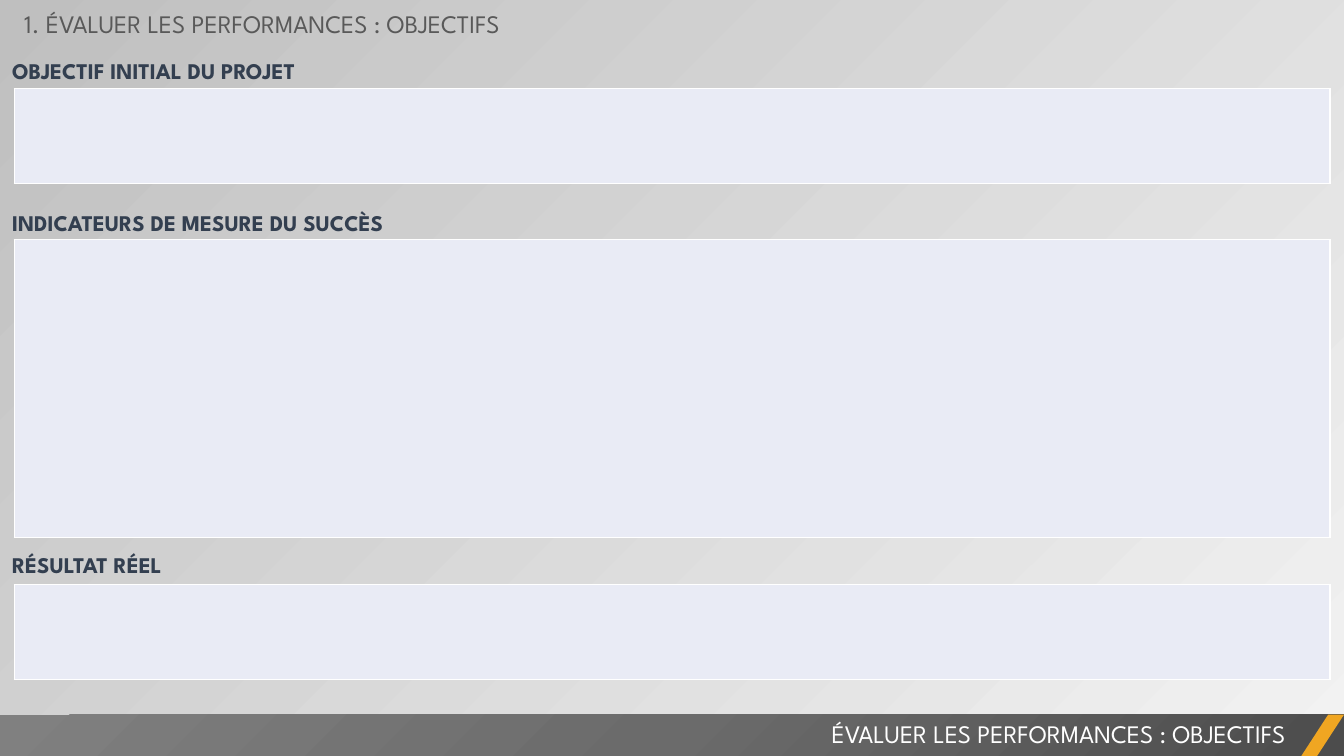
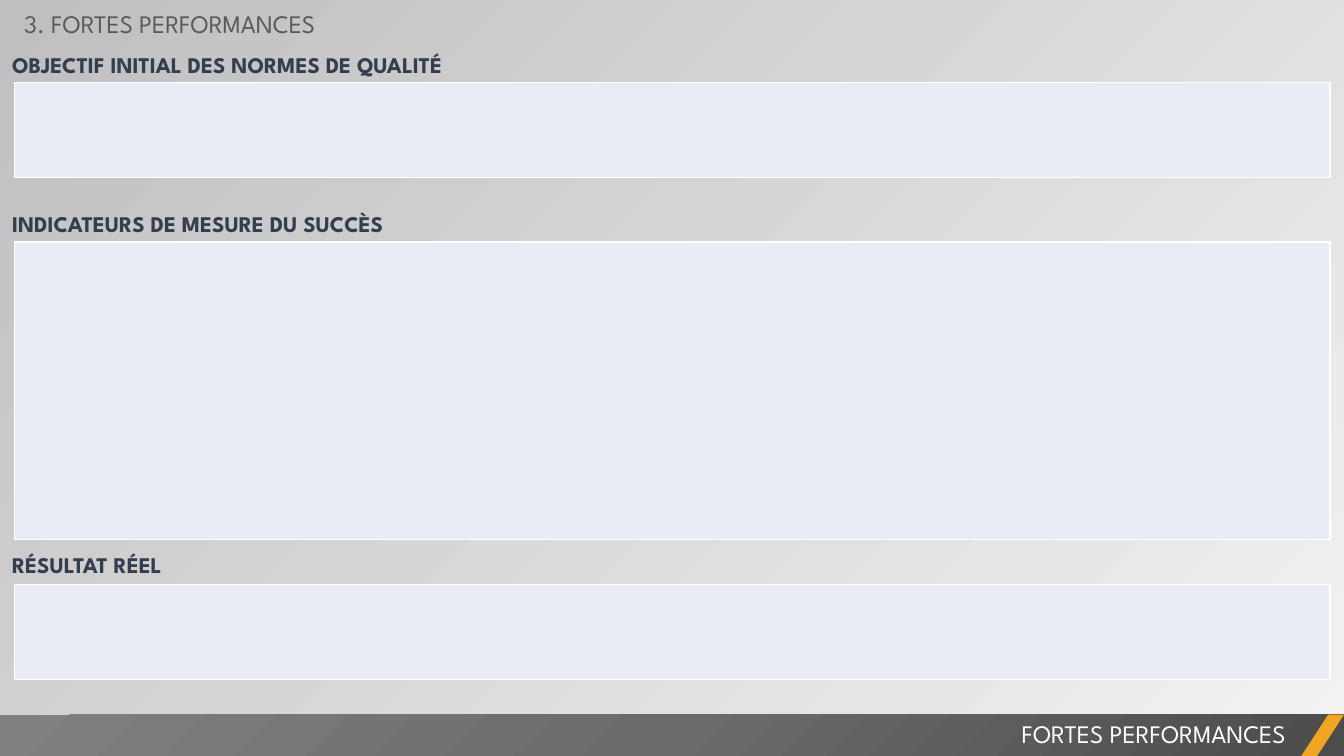
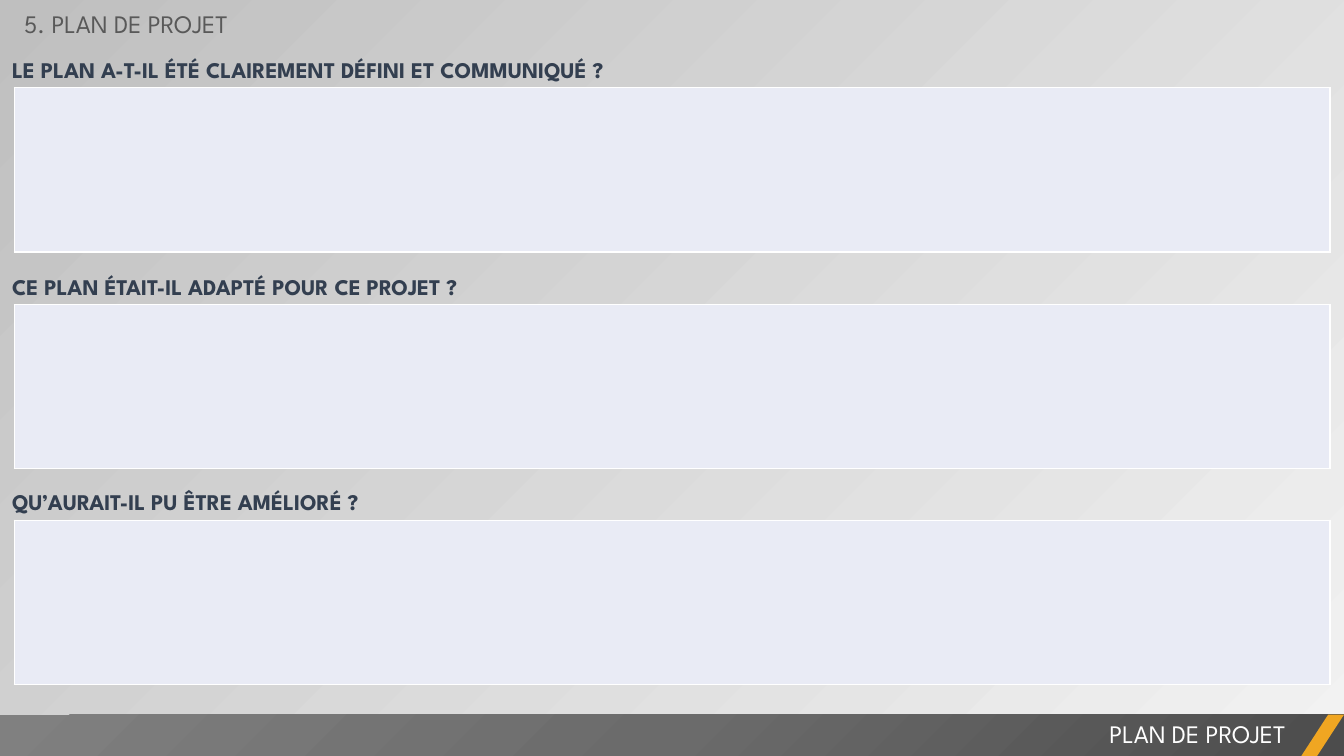
"""Build three project review slides with titled, empty answer boxes."""
from pptx import Presentation
from pptx.dml.color import RGBColor
from pptx.enum.shapes import MSO_SHAPE
from pptx.enum.text import MSO_ANCHOR, MSO_AUTO_SIZE, PP_ALIGN
from pptx.oxml import parse_xml
from pptx.oxml.ns import nsdecls, qn
from pptx.util import Inches, Pt

RECTANGLE, PARALLELOGRAM = MSO_SHAPE.RECTANGLE, MSO_SHAPE.PARALLELOGRAM
LEFT, RIGHT = PP_ALIGN.LEFT, PP_ALIGN.RIGHT
TOP, GROW = MSO_ANCHOR.TOP, MSO_AUTO_SIZE.SHAPE_TO_FIT_TEXT

FONT = "League Spartan"
WHITE = RGBColor(0xFF, 0xFF, 0xFF)
TITLE_GRAY = RGBColor(0x59, 0x59, 0x59)
NAVY = RGBColor(0x33, 0x3F, 0x50)
BOX_BLUE = RGBColor(0xE9, 0xEB, 0xF5)
ORANGE = RGBColor(0xF0, 0xA6, 0x22)
PALE_GRAY = RGBColor(0xF2, 0xF2, 0xF2)
MID_GRAY = RGBColor(0xBF, 0xBF, 0xBF)
BAND_GRAYS = [RGBColor(0x4C, 0x4C, 0x4C), RGBColor(0x6B, 0x6B, 0x6B), RGBColor(0x80, 0x80, 0x80)]

SLIDE_WIDTH, SLIDE_HEIGHT = Inches(13.33), Inches(7.5)
MARGIN = Inches(0.14)
BOX_WIDTH = SLIDE_WIDTH - 2 * MARGIN
LINE_HEIGHT = Inches(0.4)
BAND_TOP, BAND_HEIGHT = Inches(7.09), Inches(0.42)
ACCENT_WIDTH = Inches(0.43)

SLIDES = [
    ("1. ", "ÉVALUER LES PERFORMANCES : OBJECTIFS", 7.86, [
        ("OBJECTIF INITIAL DU PROJET", 3.37, 0.48, 0.88, 0.94),
        ("INDICATEURS DE MESURE DU SUCCÈS", 5.31, 1.98, 2.38, 2.95),
        ("RÉSULTAT RÉEL", 3.37, 5.38, 5.8, 0.94),
    ]),
    ("3. ", "FORTES PERFORMANCES", 5.31, [
        ("OBJECTIF INITIAL DES NORMES DE QUALITÉ", 5.58, 0.42, 0.82, 0.94),
        ("INDICATEURS DE MESURE DU SUCCÈS", 5.31, 1.99, 2.4, 2.95),
        ("RÉSULTAT RÉEL", 3.37, 5.38, 5.8, 0.94),
    ]),
    ("5. ", "PLAN DE PROJET", 5.31, [
        ("LE PLAN A-T-IL ÉTÉ CLAIREMENT DÉFINI ET COMMUNIQUÉ ?", 7.63, 0.47, 0.87, 1.63),
        ("CE PLAN ÉTAIT-IL ADAPTÉ POUR CE PROJET ?", 7.63, 2.62, 3.02, 1.63),
        ("QU’AURAIT-IL PU ÊTRE AMÉLIORÉ ?", 7.63, 4.75, 5.16, 1.63),
    ]),
]


def write_text(shape, text, size=18, color=TITLE_GRAY, bold=False, align=LEFT,
               inset=(0.1, 0.05), line_spacing=None, space_before=0):
    """Write one formatted paragraph into a shape."""
    frame = shape.text_frame
    frame.word_wrap, frame.auto_size, frame.vertical_anchor = True, GROW, TOP
    frame.margin_left = frame.margin_right = Inches(inset[0])
    frame.margin_top = frame.margin_bottom = Inches(inset[1])
    paragraph = frame.paragraphs[0]
    paragraph.alignment = align
    paragraph.space_before = Pt(space_before)
    if line_spacing:
        paragraph.line_spacing = Pt(line_spacing)
    run = paragraph.add_run()
    run.text = text
    run.font.name, run.font.size, run.font.bold = FONT, Pt(size), bold
    run.font.color.rgb = color


def set_gradient(fill, element, stops, direction):
    """Replace the first gradient under an element with the given stops."""
    fill.gradient()
    gradient = element.find(".//" + qn("a:gradFill"))
    stop_xml = "".join(
        f'<a:gs pos="{position * 1000}"><a:srgbClr val="{color}">'
        f'<a:alpha val="{opacity * 1000}"/></a:srgbClr></a:gs>'
        for position, color, opacity in stops)
    gradient.getparent().replace(gradient, parse_xml(
        f'<a:gradFill {nsdecls("a")} rotWithShape="1"><a:gsLst>{stop_xml}</a:gsLst>'
        f'{direction}</a:gradFill>'))


presentation = Presentation()
presentation.slide_width, presentation.slide_height = SLIDE_WIDTH, SLIDE_HEIGHT
title_only = presentation.slide_layouts[5]

for number, heading, title_width, sections in SLIDES:
    slide = presentation.slides.add_slide(title_only)
    shapes = slide.shapes
    set_gradient(slide.background.fill, slide.element,
                 [(0, PALE_GRAY, 40), (100, MID_GRAY, 100)],
                 '<a:lin ang="13500000" scaled="0"/>')

    title = shapes.title
    title.left, title.top = MARGIN, Inches(0.03)
    title.width, title.height = Inches(title_width), LINE_HEIGHT
    write_text(title, number + heading)

    for label, label_width, label_top, box_top, box_height in sections:
        table = shapes.add_table(1, 1, MARGIN, Inches(box_top), BOX_WIDTH, Inches(box_height)).table
        table.first_row = table.horz_banding = False
        cell = table.cell(0, 0)
        cell.fill.solid()
        cell.fill.fore_color.rgb = BOX_BLUE
        for index, side in enumerate(("lnL", "lnR", "lnT", "lnB")):
            cell._tc.get_or_add_tcPr().insert(index, parse_xml(
                f'<a:{side} {nsdecls("a")} w="{Pt(1)}"><a:solidFill>'
                f'<a:srgbClr val="{WHITE}"/></a:solidFill></a:{side}>'))
        label_box = shapes.add_textbox(0, Inches(label_top), Inches(label_width), LINE_HEIGHT)
        write_text(label_box, label, size=16, color=NAVY, bold=True, inset=(0.12, 0.06),
                   line_spacing=21.5, space_before=3.2)

    band = shapes.add_shape(RECTANGLE, 0, BAND_TOP, SLIDE_WIDTH, BAND_HEIGHT)
    set_gradient(band.fill, band.element,
                 [(50 * step, color, 100) for step, color in enumerate(BAND_GRAYS)],
                 '<a:path path="circle"><a:fillToRect l="100000" t="100000"/></a:path>')

    footer = shapes.add_textbox(Inches(5.25), Inches(7.08), Inches(7.6), LINE_HEIGHT)
    write_text(footer, heading, color=WHITE, align=RIGHT)

    accent = shapes.add_shape(PARALLELOGRAM, SLIDE_WIDTH - ACCENT_WIDTH, BAND_TOP,
                              ACCENT_WIDTH, BAND_HEIGHT)
    accent.adjustments[0] = 0.65
    accent.fill.solid()
    accent.fill.fore_color.rgb = ORANGE
    for shape in (band, accent):
        shape.line.fill.background()
        shape.shadow.inherit = False

presentation.save("out.pptx")
